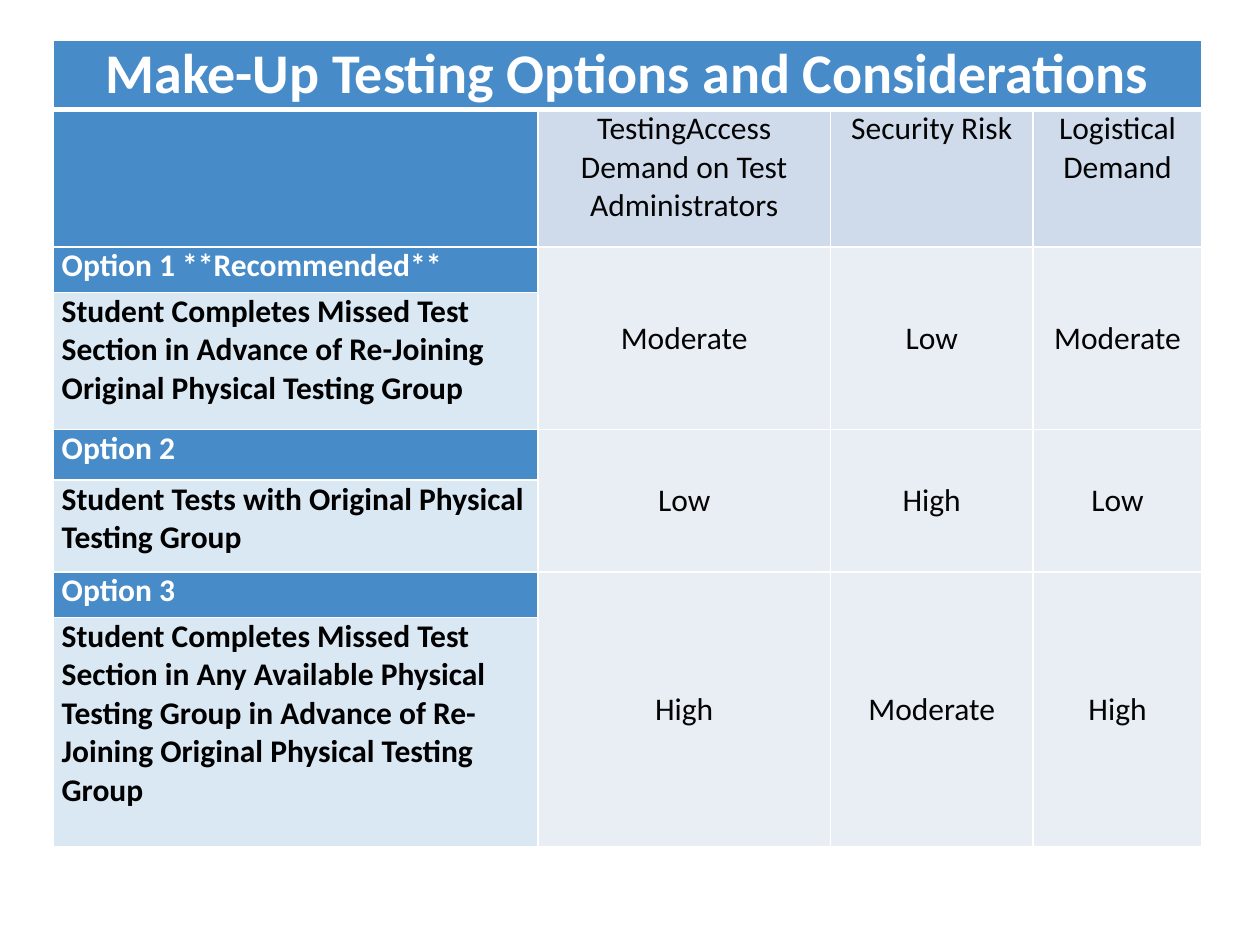
from dataclasses import dataclass

from lxml.etree import SubElement
from pptx import Presentation
from pptx.dml.color import RGBColor
from pptx.enum.text import MSO_ANCHOR, PP_ALIGN
from pptx.oxml.ns import qn
from pptx.table import Table, _Cell
from pptx.util import Pt

COLORS = {
    "blue": "488BC9",
    "header": "CFDAEB",
    "rating": "E9EEF5",
    "description": "DAE8F4",
    "white": "FFFFFF",
    "dark": "040404",
    "black": "000000",
}
COLUMN_WIDTHS = [277.2, 167.04, 115.92, 96.48]
ROW_HEIGHTS = [39.6, 78.48, 25.92, 78.48, 28.8, 52.56, 25.92, 131.04]
HEADERS = ["TestingAccess Demand on Test Administrators", "Security Risk", "Logistical Demand"]


@dataclass(frozen=True)
class CellStyle:
    fill: str
    color: str
    bold: bool = False
    size: float = 18
    align: PP_ALIGN = PP_ALIGN.CENTER
    anchor: MSO_ANCHOR = MSO_ANCHOR.TOP


@dataclass(frozen=True)
class Option:
    name: str
    description: str
    ratings: tuple[str, str, str]


TITLE = CellStyle("blue", "white", bold=True, size=32)
HEADER = CellStyle("header", "dark")
RATING = CellStyle("rating", "dark", anchor=MSO_ANCHOR.MIDDLE)
OPTION_NAME = CellStyle("blue", "white", bold=True, align=PP_ALIGN.LEFT)
DESCRIPTION = CellStyle("description", "black", bold=True, align=PP_ALIGN.LEFT)

OPTIONS = [
    Option(
        "Option 1 **Recommended**",
        "Student Completes Missed Test Section in Advance of Re-Joining "
        "Original Physical Testing Group",
        ("Moderate", "Low", "Moderate"),
    ),
    Option(
        "Option 2",
        "Student Tests with Original Physical Testing Group",
        ("Low", "High", "Low"),
    ),
    Option(
        "Option 3",
        "Student Completes Missed Test Section in Any Available Physical Testing Group "
        "in Advance of Re-Joining Original Physical Testing Group",
        ("High", "Moderate", "High"),
    ),
]


def add_borders(cell: _Cell, top: float, bottom: float) -> None:
    properties = cell._tc.get_or_add_tcPr()
    for side, width in {"lnL": 1, "lnR": 1, "lnT": top, "lnB": bottom}.items():
        line = SubElement(properties, qn(f"a:{side}"), w=str(int(Pt(width))))
        fill = SubElement(line, qn("a:solidFill"))
        SubElement(fill, qn("a:srgbClr"), val=COLORS["white"])


def write_cell(table: Table, row: int, column: int, text: str, style: CellStyle) -> None:
    cell = table.cell(row, column)
    cell.margin_left = cell.margin_right = Pt(5.04)
    cell.margin_top = cell.margin_bottom = Pt(0)
    cell.vertical_anchor = style.anchor
    add_borders(cell, top=3 if row == 1 else 1, bottom=3 if row == 0 else 1)
    cell.fill.solid()
    cell.fill.fore_color.rgb = RGBColor.from_string(COLORS[style.fill])
    cell.text = text
    paragraph = cell.text_frame.paragraphs[0]
    paragraph.alignment = style.align
    paragraph.font.name = "Calibri"
    paragraph.font.size = Pt(style.size)
    paragraph.font.bold = style.bold
    paragraph.font.color.rgb = RGBColor.from_string(COLORS[style.color])


def write_option(table: Table, row: int, option: Option) -> None:
    write_cell(table, row, 0, option.name, OPTION_NAME)
    write_cell(table, row + 1, 0, option.description, DESCRIPTION)
    for column, rating in enumerate(option.ratings, start=1):
        write_cell(table, row, column, rating, RATING)
        write_cell(table, row + 1, column, "", RATING)
        table.cell(row, column).merge(table.cell(row + 1, column))


def main() -> None:
    presentation = Presentation()
    presentation.slide_width = Pt(720)
    presentation.slide_height = Pt(540)
    slide = presentation.slides.add_slide(presentation.slide_layouts[6])

    table = slide.shapes.add_table(
        len(ROW_HEIGHTS), len(COLUMN_WIDTHS),
        Pt(30.24), Pt(23.04), Pt(sum(COLUMN_WIDTHS)), Pt(sum(ROW_HEIGHTS)),
    ).table
    for column, width in zip(table.columns, COLUMN_WIDTHS):
        column.width = Pt(width)
    for row, height in zip(table.rows, ROW_HEIGHTS):
        row.height = Pt(height)

    titles = ["Make-Up Testing Options and Considerations", "", "", ""]
    for column, text in enumerate(titles):
        write_cell(table, 0, column, text, TITLE)
    table.cell(0, 0).merge(table.cell(0, len(COLUMN_WIDTHS) - 1))

    write_cell(table, 1, 0, "", OPTION_NAME)
    for column, text in enumerate(HEADERS, start=1):
        write_cell(table, 1, column, text, HEADER)
    for index, option in enumerate(OPTIONS):
        write_option(table, 2 + 2 * index, option)

    presentation.save("out.pptx")


if __name__ == "__main__":
    main()
